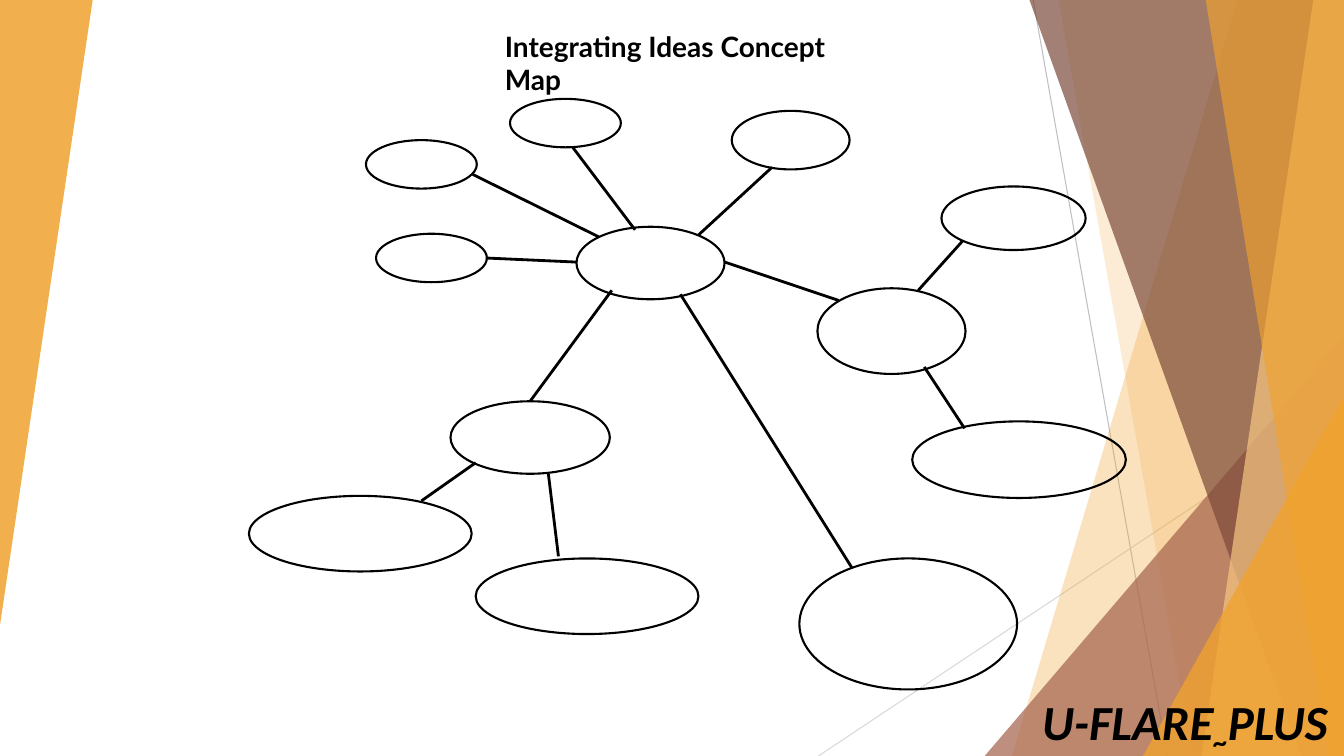
from dataclasses import dataclass

from lxml import etree
from pptx import Presentation
from pptx import util as u
from pptx.dml.color import RGBColor
from pptx.enum import shapes, text
from pptx.oxml import ns

PAGE_WIDTH, PAGE_HEIGHT = 960, 540
PANEL_TOP = -0.7
COLORS = {
    "ink": "000000",
    "amber": "F0A22E",
    "sand": "F6C782",
    "clay": "A5644E",
    "brown": "7C4B3B",
    "gray": "BFBFBF",
    "light_gray": "D9D9D9",
}


@dataclass
class Panel:
    """Band with a slanted left edge, reaching the right edge of the page."""
    top_x: float
    bottom_x: float
    color: str
    opacity: int


@dataclass
class Wedge:
    """Right triangle with its upright side on the right."""
    left: float
    top: float
    width: float
    height: float
    color: str
    opacity: int
    rotation: int = 0


@dataclass
class Bubble:
    left: float
    top: float
    width: float
    height: float


@dataclass
class Link:
    x1: float
    y1: float
    x2: float
    y2: float
    color: str = "ink"
    weight: float = 2


@dataclass
class Label:
    left: float
    top: float
    width: float
    height: float
    spans: list[tuple[str, dict]]
    font: dict


BACKDROP_LINES = [
    Link(738, 0, 833.8, 540, "gray", 0.75),
    Link(960, 290.2, 584.6, 540, "light_gray", 0.75),
]
BACKDROP = [
    Panel(884.2, 722.9, "amber", 30),
    Panel(756, 851.8, "amber", 20),
    Wedge(703.4, 239.8, 256.6, 300.2, "clay", 72),
    Panel(735.1, 929.5, "brown", 70),
    Panel(938.2, 858.2, "sand", 70),
    Panel(861.1, 949, "amber", 65),
    Wedge(816.5, 283, 143.5, 257, "amber", 80),
    Wedge(0, 0, 66.2, 446.4, "amber", 85, rotation=180),
]
BUBBLES = [
    Bubble(411.8, 162, 105.8, 51.8),
    Bubble(321.8, 286.6, 113.8, 51.8),
    Bubble(583.9, 205.9, 105.8, 61.2),
    Bubble(571, 398.9, 155.5, 93.6),
    Bubble(522.7, 79.2, 84.2, 41.8),
    Bubble(364.3, 70.6, 79.2, 34.6),
    Bubble(261.4, 100.1, 79.2, 34.6),
    Bubble(268.6, 167, 79.2, 34.6),
    Bubble(672.5, 133.2, 103, 45.4),
    Bubble(651.6, 301, 152.6, 54.7),
    Bubble(339.8, 398.9, 159.1, 54),
    Bubble(177.8, 354.2, 159.1, 54),
]
LINKS = [
    Link(437, 207.4, 378.7, 286.6),
    Link(409, 105.1, 453.6, 164.2),
    Link(517.7, 187.2, 599, 214.6),
    Link(655.9, 207.4, 687.6, 172.1),
    Link(339.8, 330.5, 301, 357.8),
    Link(499, 167.8, 551.5, 119.5),
    Link(689, 306, 660.2, 262.1),
    Link(391.7, 338.4, 398.9, 397.4),
    Link(337.7, 124.6, 427.7, 169.2),
    Link(347, 184.3, 411.8, 187.2),
    Link(486, 210.2, 608.4, 405.4),
]
LABELS = [
    Label(353.5, 17.3, 271.4, 31.7, [("Integrating Ideas Concept Map", {})],
          {"name": "Lato", "size": u.Pt(20), "bold": True}),
    Label(737.3, 490.3, 239.8, 49.7,
          [("U-FLARE", {}), ("~", {"baseline": "-25000"}), ("PLUS", {})],
          {"name": "Calibri", "size": u.Pt(35), "bold": True, "italic": True}),
]


def rgb(color: str) -> RGBColor:
    return RGBColor.from_string(COLORS[color])


def fill_translucent(shape, color: str, opacity: int) -> None:
    shape.shadow.inherit = False
    shape.line.fill.background()
    shape.fill.solid()
    shape.fill.fore_color.rgb = rgb(color)
    srgb = shape.fill._xPr.find(".//" + ns.qn("a:srgbClr"))
    etree.SubElement(srgb, ns.qn("a:alpha"), val=str(opacity * 1000))


def draw_panel(page, panel: Panel) -> None:
    builder = page.shapes.build_freeform(u.Pt(panel.top_x), u.Pt(PANEL_TOP))
    corners = [(PAGE_WIDTH, PANEL_TOP), (PAGE_WIDTH, PAGE_HEIGHT),
               (panel.bottom_x, PAGE_HEIGHT)]
    builder.add_line_segments([(u.Pt(x), u.Pt(y)) for x, y in corners], close=True)
    fill_translucent(builder.convert_to_shape(), panel.color, panel.opacity)


def draw_wedge(page, wedge: Wedge) -> None:
    shape = page.shapes.add_shape(
        shapes.MSO_SHAPE.ISOSCELES_TRIANGLE, u.Pt(wedge.left), u.Pt(wedge.top),
        u.Pt(wedge.width), u.Pt(wedge.height))
    shape.adjustments[0] = 1
    shape.rotation = wedge.rotation
    fill_translucent(shape, wedge.color, wedge.opacity)


def draw_bubble(page, bubble: Bubble) -> None:
    shape = page.shapes.add_shape(
        shapes.MSO_SHAPE.OVAL, u.Pt(bubble.left), u.Pt(bubble.top),
        u.Pt(bubble.width), u.Pt(bubble.height))
    shape.shadow.inherit = False
    shape.fill.background()
    shape.line.color.rgb = rgb("ink")
    shape.line.width = u.Pt(1.5)


def draw_link(page, link: Link) -> None:
    connector = page.shapes.add_connector(
        shapes.MSO_CONNECTOR.STRAIGHT, u.Pt(link.x1), u.Pt(link.y1),
        u.Pt(link.x2), u.Pt(link.y2))
    connector.line.color.rgb = rgb(link.color)
    connector.line.width = u.Pt(link.weight)
    etree.SubElement(connector._element.spPr, ns.qn("a:effectLst"))


def draw_label(page, label: Label) -> None:
    box = page.shapes.add_textbox(
        u.Pt(label.left), u.Pt(label.top), u.Pt(label.width), u.Pt(label.height))
    box.text_frame.word_wrap = True
    para = box.text_frame.paragraphs[0]
    para.alignment = text.PP_ALIGN.LEFT
    for words, attributes in label.spans:
        span = para.add_run()
        span.text = words
        for name, value in label.font.items():
            setattr(span.font, name, value)
        span.font.color.rgb = rgb("ink")
        for name, value in attributes.items():
            span.font._element.set(name, value)


def main() -> None:
    deck = Presentation()
    deck.slide_width, deck.slide_height = u.Pt(PAGE_WIDTH), u.Pt(PAGE_HEIGHT)
    page = deck.slides.add_slide(deck.slide_layouts[6])
    painters = {Panel: draw_panel, Wedge: draw_wedge, Bubble: draw_bubble,
                Link: draw_link, Label: draw_label}
    for item in BACKDROP_LINES + BACKDROP + BUBBLES + LINKS + LABELS:
        painters[type(item)](page, item)
    deck.save("out.pptx")


if __name__ == "__main__":
    main()
